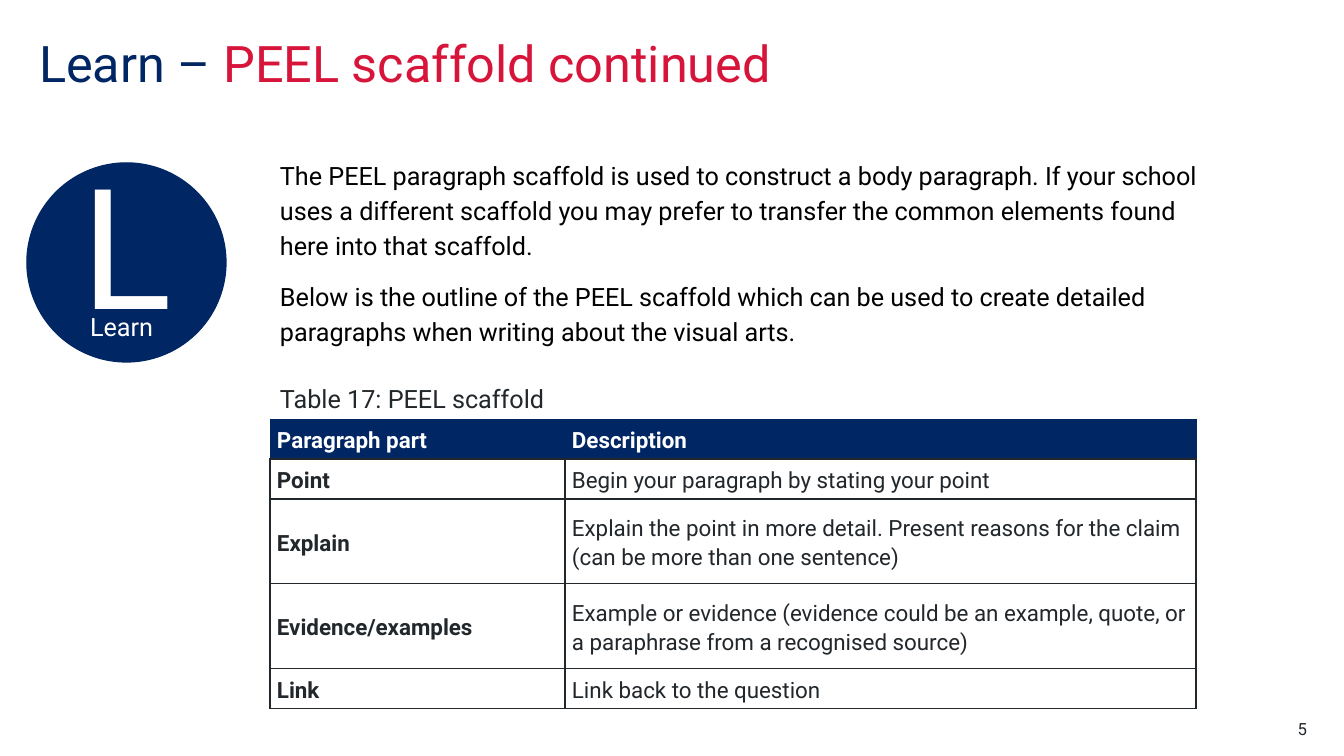
from lxml import etree
from pptx import Presentation
from pptx.dml.color import RGBColor
from pptx.enum.shapes import MSO_SHAPE as Preset
from pptx.enum.text import MSO_ANCHOR as Anchor, PP_ALIGN as Align
from pptx.oxml.ns import qn
from pptx.util import Pt

NAVY = RGBColor(0x00, 0x26, 0x64)
RED = RGBColor(0xD7, 0x15, 0x3A)
INK = RGBColor(0x22, 0x27, 0x2B)
BLACK = RGBColor(0x00, 0x00, 0x00)
WHITE = RGBColor(0xFF, 0xFF, 0xFF)
FONT = "Roboto"

INTRO = [
    "The PEEL paragraph scaffold is used to construct a body paragraph. If your school uses "
    "a different scaffold you may prefer to transfer the common elements found here into "
    "that scaffold.",
    "Below is the outline of the PEEL scaffold which can be used to create detailed "
    "paragraphs when writing about the visual arts.",
]
ROWS = [
    (40, "Paragraph part", "Description"),
    (40, "Point", "Begin your paragraph by stating your point"),
    (85, "Explain", "Explain the point in more detail. Present reasons for the claim "
                    "(can be more than one sentence)"),
    (85, "Evidence/examples", "Example or evidence (evidence could be an example, quote, or "
                              "a paraphrase from a recognised source)"),
    (40, "Link", "Link back to the question"),
]
COLUMN_WIDTHS = (295, 631)


def px(length):
    return round(length * 9144000 / 1008)


def place(*lengths):
    return [px(length) for length in lengths]


def add_run(para, text, size, color, bold=False):
    span = para.add_run()
    span.text = text
    span.font.name = FONT
    span.font.size = Pt(size)
    span.font.bold = bold
    span.font.color.rgb = color


def set_insets(target, left, top, right, bottom):
    target.margin_left, target.margin_top, target.margin_right, target.margin_bottom = place(
        left, top, right, bottom)


def add_text(shapes, frame, texts, size, color, insets=(10, 5, 10, 5),
             align=Align.LEFT, line_spacing=1.0, gap=0):
    box = shapes.add_textbox(*place(*frame)).text_frame
    box.word_wrap = True
    set_insets(box, *insets)
    for index, text in enumerate(texts):
        para = box.add_paragraph() if index else box.paragraphs[0]
        para.alignment = align
        para.line_spacing = line_spacing
        if index:
            para.space_before = Pt(gap)
        add_run(para, text, size, color)


def add_title(page):
    title = page.shapes.title
    title.left, title.top, title.width, title.height = place(39, 39, 1111, 111)
    box = title.text_frame
    box.word_wrap = True
    box.vertical_anchor = Anchor.TOP
    set_insets(box, 0, 0, 0, 0)
    para = box.paragraphs[0]
    para.alignment = Align.LEFT
    para.line_spacing = 0.9
    add_run(para, "Learn – ", 36, NAVY)
    add_run(para, "PEEL scaffold continued", 36, RED)


def add_badge(page):
    badge = page.shapes.add_group_shape()
    circle = badge.shapes.add_shape(Preset.OVAL, *place(27, 163, 199, 199))
    circle.shadow.inherit = False
    circle.fill.solid()
    circle.fill.fore_color.rgb = NAVY
    circle.line.color.rgb = NAVY
    circle.line.width = Pt(1)
    box = circle.text_frame
    box.vertical_anchor = Anchor.MIDDLE
    set_insets(box, 10, 0, 10, 40)
    para = box.paragraphs[0]
    para.alignment = Align.CENTER
    add_run(para, "L", 120, WHITE)
    add_text(badge.shapes, (90, 311, 74, 48), ["Learn"], 18, WHITE, (0, 0, 0, 0))


def set_border(cell, position, side, color, width):
    line = etree.Element(qn("a:ln" + side), w=str(Pt(width)))
    fill = etree.SubElement(line, qn("a:solidFill"))
    etree.SubElement(fill, qn("a:srgbClr"), val=str(color))
    cell._tc.get_or_add_tcPr().insert(position, line)


def format_cell(cell, text, is_header, is_label):
    cell.fill.solid()
    cell.fill.fore_color.rgb = NAVY if is_header else WHITE
    cell.vertical_anchor = Anchor.MIDDLE
    set_insets(cell, 7, 0, 7, 0)
    para = cell.text_frame.paragraphs[0]
    para.line_spacing = 1.15
    add_run(para, text, 16, WHITE if is_header else INK, is_header or is_label)
    for position, side in enumerate("LRTB"):
        if is_header and side != "B":
            set_border(cell, position, side, NAVY, 0.5)
        else:
            set_border(cell, position, side, INK, 1)


def add_scaffold_table(page):
    height = sum(row[0] for row in ROWS)
    frame = page.shapes.add_table(len(ROWS), len(COLUMN_WIDTHS),
                                  *place(270, 419, sum(COLUMN_WIDTHS), height))
    table = frame.table
    table.horz_banding = False
    for column, width in zip(table.columns, COLUMN_WIDTHS):
        column.width = px(width)
    for row_index, (row_height, *texts) in enumerate(ROWS):
        table.rows[row_index].height = px(row_height)
        for column_index, text in enumerate(texts):
            format_cell(table.cell(row_index, column_index), text,
                        row_index == 0, column_index == 0)


def main():
    deck = Presentation()
    deck.slide_width, deck.slide_height = place(1344, 756)
    page = deck.slides.add_slide(deck.slide_layouts[5])
    add_title(page)
    add_badge(page)
    add_text(page.shapes, (270, 151, 961, 200), INTRO, 18, BLACK, line_spacing=1.15, gap=12)
    add_text(page.shapes, (270, 378, 821, 40), ["Table 17: PEEL scaffold"], 18, INK)
    add_scaffold_table(page)
    add_text(page.shapes, (1227, 719, 80, 20), ["5"], 12, INK, (0, 0, 0, 0), Align.RIGHT)
    deck.save("out.pptx")


if __name__ == "__main__":
    main()
